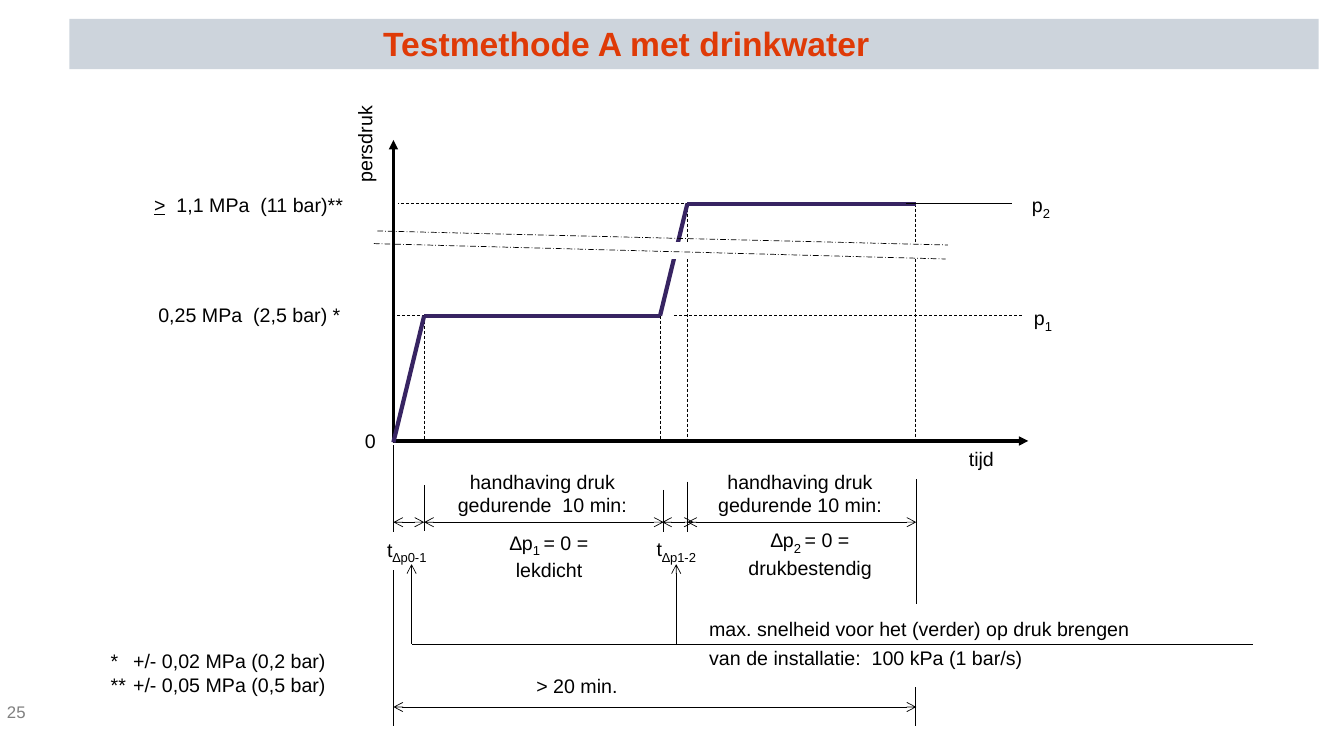
from lxml import etree
from pptx import Presentation
from pptx.dml.color import RGBColor
from pptx.enum.dml import MSO_LINE
from pptx.enum.shapes import MSO_CONNECTOR, MSO_SHAPE
from pptx.enum.text import MSO_ANCHOR, MSO_AUTO_SIZE, PP_ALIGN
from pptx.oxml.ns import qn
from pptx.util import Pt

BLACK = RGBColor(0x00, 0x00, 0x00)
WHITE = RGBColor(0xFF, 0xFF, 0xFF)
GREY = RGBColor(0x80, 0x80, 0x80)
BAND = RGBColor(0xCD, 0xD4, 0xDC)
ORANGE = RGBColor(0xDF, 0x3A, 0x07)
PURPLE = RGBColor(0x37, 0x24, 0x62)

LEFT, CENTER = PP_ALIGN.LEFT, PP_ALIGN.CENTER
TOP, MIDDLE = MSO_ANCHOR.TOP, MSO_ANCHOR.MIDDLE
DASH, DASH_DOT = MSO_LINE.DASH, MSO_LINE.LONG_DASH_DOT
STRAIGHT, RECT = MSO_CONNECTOR.STRAIGHT, MSO_SHAPE.RECTANGLE
GROW = MSO_AUTO_SIZE.SHAPE_TO_FIT_TEXT
SUB, UNDER = "subscript", "underline"


class Slide:
    font, size, sub_size = "Arial", 14, 16

    def __init__(self, prs):
        self.s = prs.slides.add_slide(prs.slide_layouts[5])

    def run(self, p, text, size=None, color=BLACK, bold=False, style=None):
        r = p.add_run()
        r.text = text
        r.font.name = self.font
        r.font.size = Pt(self.sub_size if style == SUB else size or self.size)
        r.font.color.rgb = color
        r.font.bold = bold
        if style == UNDER:
            r.font.underline = True
        if style == SUB:
            r.font._element.set("baseline", "-25000")

    def title(self, text, x, y, w, h):
        sp = self.s.shapes.title
        sp.left, sp.top, sp.width, sp.height = Pt(x), Pt(y), Pt(w), Pt(h)
        tf = sp.text_frame
        tf.word_wrap, tf.vertical_anchor = False, TOP
        p = tf.paragraphs[0]
        p.alignment = LEFT
        self.run(p, text, 24, ORANGE, True)
        return sp

    def text(self, x, y, w, h, *lines, align=LEFT, size=None, color=BLACK):
        """Each line is a list of plain strings and (string, style) pairs."""
        sp = self.s.shapes.add_textbox(Pt(x), Pt(y), Pt(w), Pt(h))
        tf = sp.text_frame
        tf.word_wrap, tf.auto_size = False, GROW
        for i, line in enumerate(lines):
            p = tf.add_paragraph() if i else tf.paragraphs[0]
            p.alignment = align
            for part in line:
                text, style = (part, None) if isinstance(part, str) else part
                self.run(p, text, size, color, style=style)
        return sp

    def rect(self, x, y, w, h, color):
        sp = self.s.shapes.add_shape(RECT, Pt(x), Pt(y), Pt(w), Pt(h))
        sp.shadow.inherit = False
        sp.fill.solid()
        sp.fill.fore_color.rgb = color
        sp.line.fill.background()
        return sp

    def line(self, x1, y1, x2, y2, color=BLACK, width=0.5, dash=None, head=None, tail=None):
        c = self.s.shapes.add_connector(STRAIGHT, Pt(x1), Pt(y1), Pt(x2), Pt(y2))
        c.line.color.rgb = color
        c.line.width = Pt(width)
        if dash:
            c.line.dash_style = dash
        ln = c.line._get_or_add_ln()
        for tag, kind in (("a:headEnd", head), ("a:tailEnd", tail)):
            if kind:
                etree.SubElement(ln, qn(tag)).set("type", kind)
        etree.SubElement(c._element.spPr, qn("a:effectLst"))

    def span(self, x1, x2, y):
        self.line(x1, y, x2, y, head="arrow", tail="arrow")


def build(prs):
    s = Slide(prs)

    # Key times (x) and pressures (y) of the test
    start, first_on, first_off, second_on, end = 281, 303, 471.5, 491, 654
    zero, p1, p2 = 315, 225.5, 145.5
    spans_y, total_y, speed_y = 373, 505, 460

    # Title on its band
    title = s.title("Testmethode A met drinkwater", 266.5, 13, 371.5, 36)
    band = s.rect(49.5, 13.5, 892.5, 36, BAND)
    title.element.addprevious(band.element)

    # Axes
    s.line(start, 100, start, zero + 1, width=2.25, head="triangle")
    s.line(start, zero, 734.5, zero, width=2.25, tail="triangle")
    s.line(first_on, zero + 1, 284.5, zero + 1)

    # Guide lines
    for x, y in ((first_on, p1), (first_off, p1), (second_on, p2), (end, p2)):
        s.line(x, y, x, zero, dash=DASH)
    for x1, x2, y in ((371.5, start, p1), (503, 284.5, p2), (481.5, 731.5, p1)):
        s.line(x1, y, x2, y, dash=DASH)

    # Pressure curve
    curve = [(start, zero + 1), (first_on, p1), (first_off, p1), (second_on, p2), (end, p2)]
    for a, b in zip(curve, curve[1:]):
        s.line(*a, *b, color=PURPLE, width=3)
    s.line(647.5, p2, 723, p2)

    # Break in the pressure scale
    s.rect(471.5, 173, 203, 12, WHITE)
    s.line(269.5, 165, 677, 175, dash=DASH_DOT)
    s.line(267, 174, 675.5, 185, dash=DASH_DOT)

    # Axis and level labels
    s.text(224, 88.5, 73.5, 24.5, ["persdruk"]).rotation = 270
    s.text(685, 315.5, 36.5, 24.5, ["tijd"])
    s.text(253.5, 302.5, 22, 24.5, ["0"])
    s.text(106, 213, 145.5, 24.5, ["0,25 MPa  (2,5 bar) *"])
    s.text(103, 134, 150.5, 24.5, [(">", UNDER), "  1,1 MPa  (11 bar)**"])
    s.text(731.5, 213, 28, 24.5, ["p", ("1", SUB)])
    s.text(730, 132.5, 28, 24.5, ["p", ("2", SUB)])

    # Time marks below the axis
    for x, y1, y2 in ((start, 318, 380), (first_on, 346.5, 379.5), (474, 350, 380),
                      (second_on, 344, 380), (654.5, 342.5, 431.5),
                      (start, 407.5, 518.5), (end, 491, 518.5)):
        s.line(x, y1, x, y2)
    for x1, x2 in ((start, first_on), (first_on, 474), (473, 495.5), (second_on, 654.5)):
        s.span(x1, x2, spans_y)
    s.span(start, 654.5, total_y)
    s.text(376, 478, 72.5, 24.5, ["> 20 min."])

    # Holding periods
    s.text(319.5, 332, 136, 41, ["handhaving druk"], ["gedurende  10 min:"], align=CENTER)
    s.text(505.5, 332, 132, 41, ["handhaving druk"], ["gedurende 10 min:"], align=CENTER)
    s.text(353, 373.5, 78.5, 44, ["∆p", ("1 ", SUB), "= 0 ="], ["lekdicht"], align=CENTER)
    s.text(525, 371.5, 107.5, 44, ["∆p", ("2 ", SUB), "= 0 ="], ["drukbestendig"], align=CENTER)

    # Pressure rise times and their speed note
    s.text(269.5, 378.5, 46, 24.5, ["t", ("∆p0-1", SUB)])
    s.text(462, 378, 46, 24.5, ["t", ("∆p1-2", SUB)])
    s.line(895, speed_y, 294, speed_y)
    for x in (294, 483):
        s.line(x, speed_y, x, 403, tail="arrow")
    speed = s.text(499.5, 437, 316, 46, ["max. snelheid voor het (verder) op druk brengen"],
                   ["van de installatie:  100 kPa (1 bar/s)"])
    speed.text_frame.paragraphs[1].space_before = Pt(4)

    # Tolerances, aligned on a tab stop
    notes = s.text(72, 460, 170, 41, ["*\t+/- 0,02 MPa (0,2 bar)"], ["**\t+/- 0,05 MPa (0,5 bar)"])
    for p in notes.text_frame.paragraphs:
        tabs = etree.SubElement(p._p.get_or_add_pPr(), qn("a:tabLst"))
        etree.SubElement(tabs, qn("a:tab"), pos=str(Pt(16)), algn="l")

    # Slide number
    tf = s.text(5, 494, 51, 29, ["25"], size=12, color=GREY).text_frame
    tf.word_wrap, tf.auto_size, tf.vertical_anchor = True, MSO_AUTO_SIZE.NONE, MIDDLE
    tf.margin_left = tf.margin_right = tf.margin_top = tf.margin_bottom = 0


def main():
    prs = Presentation()
    prs.slide_width, prs.slide_height = Pt(960), Pt(540)
    build(prs)
    prs.save("out.pptx")


if __name__ == "__main__":
    main()
